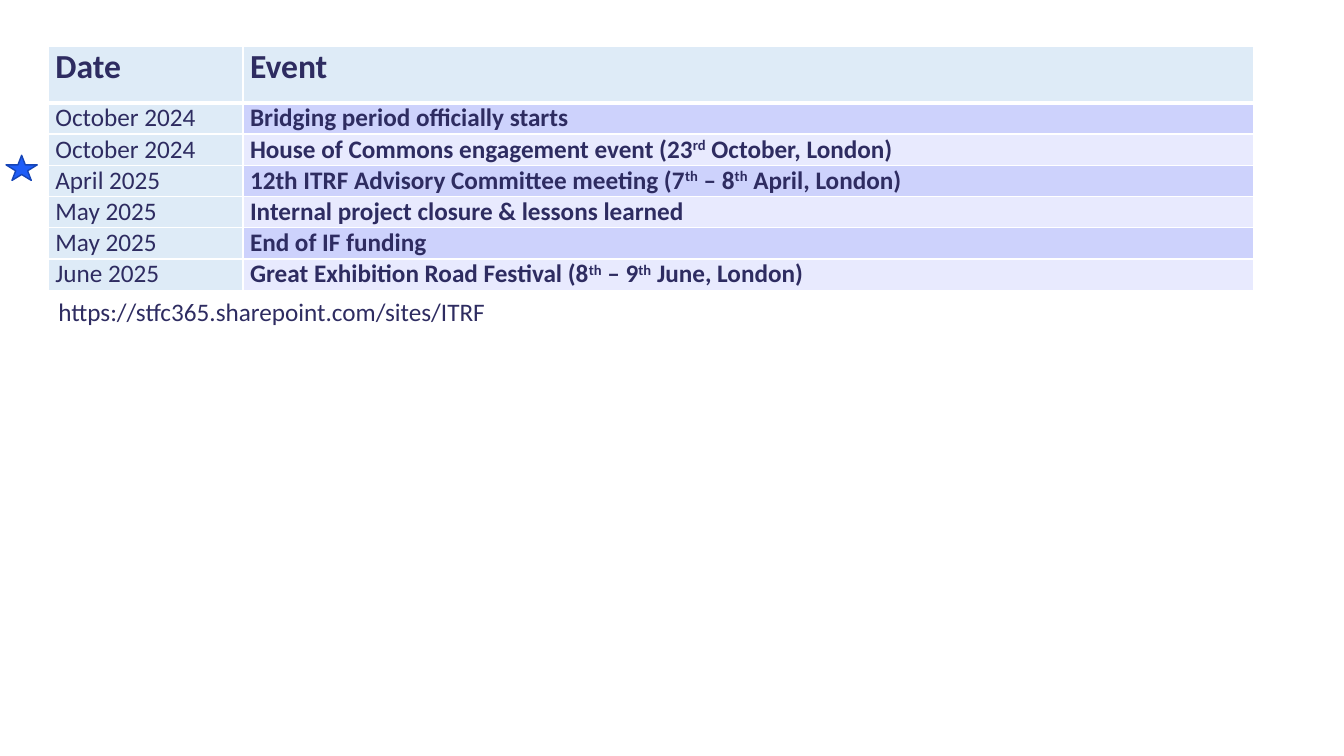
from pptx import Presentation
from pptx import util as u
from pptx.dml.color import RGBColor
from pptx.enum import shapes, text
from pptx.oxml import parse_xml
from pptx.oxml.ns import nsdecls

PX = 9144
COLORS = {"ink": "2E2C61", "date": "DEEBF7", "odd": "CDD2FC", "even": "E8EAFE",
          "rule": "FFFFFF", "star": "1E5DF8", "edge": "1645B7"}
EVENTS = [
    ("Date", "Event"),
    ("October 2024", "Bridging period officially starts"),
    ("October 2024", "House of Commons engagement event (23^rd^ October, London)"),
    ("April 2025", "12th ITRF Advisory Committee meeting (7^th^ – 8^th^ April, London)"),
    ("May 2025", "Internal project closure & lessons learned"),
    ("May 2025", "End of IF funding"),
    ("June 2025", "Great Exhibition Road Festival (8^th^ – 9^th^ June, London)"),
]


class Deck:
    """Holds the style and the current slide, and adds elements measured in px."""

    def __init__(self, width, height):
        self.prs = Presentation()
        self.prs.slide_width, self.prs.slide_height = width * PX, height * PX
        self.s = self.prs.slides.add_slide(self.prs.slide_layouts[6])

    def color(self, name):
        return RGBColor.from_string(COLORS[name])

    def add_runs(self, p, content, **fmt):
        for i, part in enumerate(content.split("^")):
            r = p.add_run()
            r.text = part
            for key, value in {"name": "Calibri", "size": u.Pt(18), **fmt}.items():
                setattr(r.font, key, value)
            r.font.color.rgb = self.color("ink")
            if i % 2:
                r._r.get_or_add_rPr().set("baseline", "30000")

    def borders(self, cell, **points):
        tcPr = cell._tc.get_or_add_tcPr()
        for i, side in enumerate("LRTB"):
            width = u.Pt(points.get(side, 1))
            tcPr.insert(i, parse_xml(
                f'<a:ln{side} {nsdecls("a")} w="{width}"><a:solidFill>'
                f'<a:srgbClr val="{COLORS["rule"]}"/></a:solidFill></a:ln{side}>'))

    def cell(self, cell, row, col, content):
        head = row == 0
        fill = "date" if head or col == 0 else "odd" if row % 2 else "even"
        cell.fill.solid()
        cell.fill.fore_color.rgb = self.color(fill)
        margins = {"margin_left": 7 * PX, "margin_right": 7 * PX,
                   "margin_top": 0, "margin_bottom": 0}
        for key, value in margins.items():
            setattr(cell, key, value)
        p = cell.text_frame.paragraphs[0]
        p.alignment = text.PP_ALIGN.JUSTIFY
        p.space_after = u.Pt(6 if head else 2)
        self.add_runs(p, content, bold=head or col == 1, size=u.Pt(24 if head else 18))
        self.borders(cell, **({"B": 3} if head else {"T": 3} if row == 1 else {}))

    def table(self, x, y, widths, head, height, rows):
        total = head + height * (len(rows) - 1)
        box = [v * PX for v in (x, y, sum(widths), total)]
        tbl = self.s.shapes.add_table(len(rows), len(widths), *box).table
        for col, width in zip(tbl.columns, widths):
            col.width = width * PX
        for i, row in enumerate(rows):
            tbl.rows[i].height = (height if i else head) * PX
            for j, content in enumerate(row):
                self.cell(tbl.cell(i, j), i, j, content)

    def star(self, *box):
        sp = self.s.shapes.add_shape(shapes.MSO_SHAPE.STAR_5_POINT, *(v * PX for v in box))
        sp.shadow.inherit = False
        sp.fill.solid()
        sp.fill.fore_color.rgb = self.color("star")
        sp.line.color.rgb = self.color("edge")
        sp.line.width = u.Pt(1)

    def label(self, content, *box):
        tf = self.s.shapes.add_textbox(*(v * PX for v in box)).text_frame
        tf.word_wrap = False
        tf.auto_size = text.MSO_AUTO_SIZE.SHAPE_TO_FIT_TEXT
        self.add_runs(tf.paragraphs[0], content)


def main():
    deck = Deck(1333, 750)
    deck.table(48, 46, (193, 1002), 56, 31, EVENTS)
    deck.star(6, 154, 31, 25)
    deck.label("https://stfc365.sharepoint.com/sites/ITRF", 48, 289, 449, 40)
    deck.prs.save("out.pptx")


if __name__ == "__main__":
    main()
